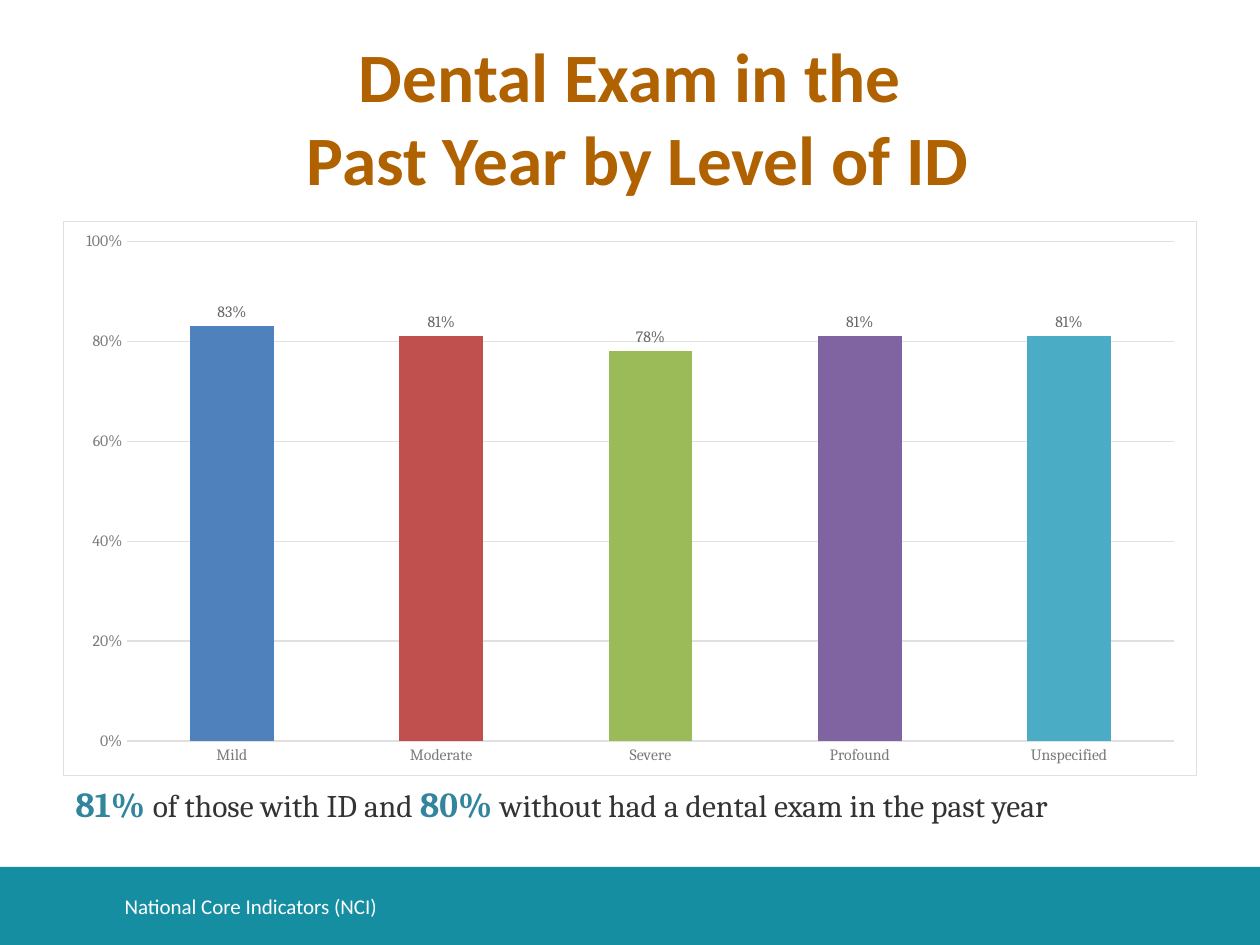
from dataclasses import dataclass
from typing import Any, NamedTuple

import pptx
import pptx.chart.data
import pptx.dml.color
import pptx.enum.chart
import pptx.enum.shapes
import pptx.enum.text
import pptx.oxml
import pptx.oxml.ns
import pptx.util

Inches = pptx.util.Inches
Pt = pptx.util.Pt


@dataclass(frozen=True)
class Theme:
    heading: str = "Calibri"
    body: str = "Cambria"
    title: str = "B06100"
    band: str = "168EA2"
    accent: str = "31859C"
    text: str = "333333"
    axis: str = "7A7A7A"
    label: str = "666666"
    rule: str = "E0E0E0"
    white: str = "FFFFFF"
    title_pt: float = 39.6
    accent_pt: float = 20
    body_pt: float = 18
    footer_pt: float = 12
    chart_pt: float = 10
    axis_pt: float = 9
    rule_pt: float = 0.75


class Box(NamedTuple):
    left: float
    top: float
    width: float
    height: float


class Run(NamedTuple):
    text: str
    font: str
    size: float
    color: str
    bold: bool = False


class Bar(NamedTuple):
    category: str
    value: float
    color: str


THEME = Theme()
BARS = [
    Bar("Mild", 0.83, "4F81BD"),
    Bar("Moderate", 0.81, "C0504D"),
    Bar("Severe", 0.78, "9BBB59"),
    Bar("Profound", 0.81, "8064A2"),
    Bar("Unspecified", 0.81, "4BACC6"),
]


def rgb(color: str) -> pptx.dml.color.RGBColor:
    return pptx.dml.color.RGBColor.from_string(color)


def apply(target: Any, values: dict[str, Any]) -> None:
    for name, value in values.items():
        setattr(target, name, value)


def place(sp: Any, box: Box) -> None:
    apply(sp, {name: Inches(v) for name, v in box._asdict().items()})


def style_font(font: Any, name: str, size: float, color: str, bold: bool = False) -> None:
    apply(font, {"name": name, "size": Pt(size), "bold": bold})
    font.color.rgb = rgb(color)


def style_line(line: Any) -> None:
    line.color.rgb = rgb(THEME.rule)
    line.width = Pt(THEME.rule_pt)


def write_runs(tf: Any, runs: list[Run], **frame: Any) -> Any:
    apply(tf, {"word_wrap": True, **frame})
    p = tf.paragraphs[0]
    for run in runs:
        r = p.add_run()
        r.text = run.text
        style_font(r.font, run.font, run.size, run.color, run.bold)
    return p


def add_text(s: Any, box: Box, runs: list[Run], **frame: Any) -> None:
    sp = s.shapes.add_textbox(*map(Inches, box))
    write_runs(sp.text_frame, runs, **frame)


def add_band(s: Any, box: Box) -> None:
    sp = s.shapes.add_shape(pptx.enum.shapes.MSO_SHAPE.RECTANGLE, *map(Inches, box))
    sp.shadow.inherit = False
    sp.fill.solid()
    sp.fill.fore_color.rgb = rgb(THEME.band)
    sp.line.fill.background()


def add_title(s: Any, box: Box, lines: list[str]) -> None:
    sp = s.shapes.title
    place(sp, box)
    tf = sp.text_frame
    p = tf.paragraphs[0]
    for i, line in enumerate(lines):
        if i:
            p.add_line_break()
        write_runs(
            tf,
            [Run(line, THEME.heading, THEME.title_pt, THEME.title, True)],
            vertical_anchor=pptx.enum.text.MSO_ANCHOR.MIDDLE,
            auto_size=pptx.enum.text.MSO_AUTO_SIZE.NONE,
        )
    p.alignment = pptx.enum.text.PP_ALIGN.CENTER


def frame_chart(chart: Any) -> None:
    ns = pptx.oxml.ns.nsdecls("c", "a")
    sp_pr = pptx.oxml.parse_xml(
        f'<c:spPr {ns}><a:solidFill><a:srgbClr val="{THEME.white}"/></a:solidFill>'
        f'<a:ln w="{Pt(THEME.rule_pt)}"><a:solidFill><a:srgbClr val="{THEME.rule}"/>'
        "</a:solidFill></a:ln></c:spPr>"
    )
    chart.element.find(pptx.oxml.ns.qn("c:chart")).addnext(sp_pr)


def add_bar_chart(s: Any, box: Box, bars: list[Bar]) -> None:
    data = pptx.chart.data.CategoryChartData(number_format="0%")
    data.categories = [bar.category for bar in bars]
    data.add_series("Series 1", [bar.value for bar in bars])
    kind = pptx.enum.chart.XL_CHART_TYPE.COLUMN_CLUSTERED
    chart = s.shapes.add_chart(kind, *map(Inches, box), data).chart
    apply(chart, {"has_title": False, "has_legend": False})
    style_font(chart.font, THEME.body, THEME.chart_pt, THEME.text)
    frame_chart(chart)

    none = pptx.enum.chart.XL_TICK_MARK.NONE
    for axis in (chart.category_axis, chart.value_axis):
        apply(axis, {"major_tick_mark": none, "minor_tick_mark": none})
        style_font(axis.tick_labels.font, THEME.body, THEME.axis_pt, THEME.axis)
    style_line(chart.category_axis.format.line)
    values = chart.value_axis
    apply(values, {"minimum_scale": 0, "maximum_scale": 1, "major_unit": 0.2})
    values.format.line.fill.background()
    style_line(values.major_gridlines.format.line)
    percent = {"number_format": "0%", "number_format_is_linked": False}
    apply(values.tick_labels, percent)

    plot = chart.plots[0]
    apply(plot, {"gap_width": 150, "vary_by_categories": False})
    series = plot.series[0]
    for i, bar in enumerate(bars):
        fill = series.points[i].format.fill
        fill.solid()
        fill.fore_color.rgb = rgb(bar.color)
    labels = series.data_labels
    outside = pptx.enum.chart.XL_LABEL_POSITION.OUTSIDE_END
    apply(labels, {"show_value": True, "position": outside, **percent})
    style_font(labels.font, THEME.body, THEME.axis_pt, THEME.label)


def main() -> None:
    prs = pptx.Presentation()
    apply(prs, {"slide_width": Inches(10), "slide_height": Inches(7.5)})
    s = prs.slides.add_slide(prs.slide_layouts[5])

    add_band(s, Box(0, 6.88, 10, 0.62))
    add_title(s, Box(0.5, 0.3, 9, 1.25), ["Dental Exam in the", " Past Year by Level of ID"])
    add_bar_chart(s, Box(0.5, 1.75, 9, 4.41), BARS)
    add_text(
        s,
        Box(0.89, 6.99, 7.4, 0.4),
        [Run("National Core Indicators (NCI)", THEME.heading, THEME.footer_pt, THEME.white)],
        vertical_anchor=pptx.enum.text.MSO_ANCHOR.MIDDLE,
    )
    strong = (THEME.body, THEME.accent_pt, THEME.accent, True)
    plain = (THEME.body, THEME.body_pt, THEME.text)
    add_text(
        s,
        Box(0.5, 6.16, 9, 0.44),
        [
            Run("81% ", *strong),
            Run("of those with ID and ", *plain),
            Run("80% ", *strong),
            Run("without had a dental exam in the past year", *plain),
        ],
        auto_size=pptx.enum.text.MSO_AUTO_SIZE.SHAPE_TO_FIT_TEXT,
    )
    prs.save("out.pptx")


if __name__ == "__main__":
    main()
